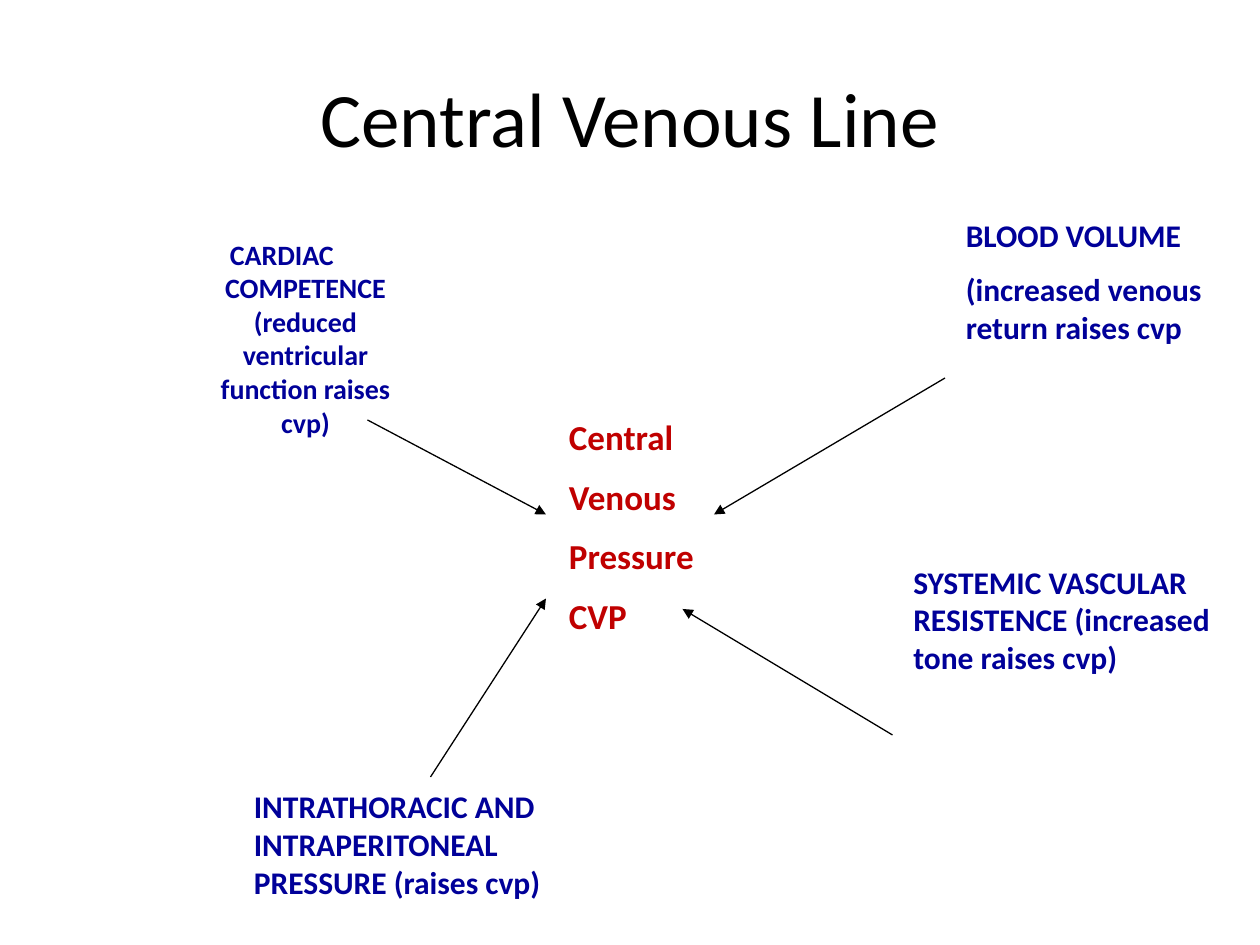
import pptx
import pptx.dml.color
import pptx.enum.shapes
import pptx.enum.text
import pptx.oxml.ns
import pptx.util
from lxml import etree
from dataclasses import dataclass

ALIGN = pptx.enum.text.PP_ALIGN
ANCHOR = pptx.enum.text.MSO_ANCHOR
FIT = pptx.enum.text.MSO_AUTO_SIZE


@dataclass(frozen=True)
class Theme:
    font: str = "Calibri"
    title: str = "000000"
    center: str = "C00000"
    factor: str = "000099"
    arrow: str = "000000"
    title_size: int = 44
    center_size: int = 20
    factor_size: int = 18
    small_size: int = 16
    arrow_width: float = 0.75


THEME = Theme()
COLUMNS, ROWS = 120, 90
CELL = pptx.util.Inches(10) // COLUMNS
HANGING = 4.5

TITLE = ("Central Venous Line", (6, 3.6, 108, 15))
CARDIAC = (
    "CARDIAC COMPETENCE (reduced ventricular function raises cvp)",
    (12.84, 22, 28, 21),
)
CENTER = (["Central", "Venous", "Pressure", "CVP"], (53, 39, 20, 23.2))
FACTORS = [
    (["BLOOD VOLUME", "(increased venous return raises cvp"], (90.8, 20, 26, 21.2)),
    (["SYSTEMIC VASCULAR RESISTENCE (increased tone raises cvp)"], (85.8, 53, 30.7, 19.4)),
    (["INTRATHORACIC AND INTRAPERITONEAL PRESSURE (raises cvp)"], (23, 74.4, 36, 15.6)),
]
ARROWS = [
    ((90, 36), (68, 49)),
    ((85, 70), (65, 58)),
    ((41, 74), (52, 57)),
    ((35, 40), (52, 49)),
]


def grid(*cells):
    return [pptx.util.Emu(round(cell * CELL)) for cell in cells]


def rgb(value):
    return pptx.dml.color.RGBColor.from_string(value)


def add_text(page, lines, area, size, color, bold=True, align=ALIGN.LEFT,
             anchor=ANCHOR.TOP, fit=FIT.SHAPE_TO_FIT_TEXT):
    box = page.shapes.add_textbox(*grid(*area))
    frame = box.text_frame
    frame.word_wrap = True
    frame.auto_size = fit
    frame.vertical_anchor = anchor
    for index, line in enumerate(lines):
        para = frame.add_paragraph() if index else frame.paragraphs[0]
        para.alignment = align
        if index:
            para.space_before = pptx.util.Pt(size / 2)
        span = para.add_run()
        span.text = line
        span.font.name = THEME.font
        span.font.size = pptx.util.Pt(size)
        span.font.bold = bold
        span.font.color.rgb = rgb(color)
    return box


def add_arrow(page, start, end):
    arrow = page.shapes.add_connector(
        pptx.enum.shapes.MSO_CONNECTOR.STRAIGHT, *grid(*start, *end))
    arrow.line.color.rgb = rgb(THEME.arrow)
    arrow.line.width = pptx.util.Pt(THEME.arrow_width)
    outline = arrow.line._get_or_add_ln()
    etree.SubElement(outline, pptx.oxml.ns.qn("a:tailEnd"), type="triangle")
    etree.SubElement(arrow._element.spPr, pptx.oxml.ns.qn("a:effectLst"))


def main():
    deck = pptx.Presentation()
    deck.slide_width, deck.slide_height = grid(COLUMNS, ROWS)
    page = deck.slides.add_slide(deck.slide_layouts[6])

    heading, area = TITLE
    add_text(page, [heading], area, THEME.title_size, THEME.title, bold=False,
             align=ALIGN.CENTER, anchor=ANCHOR.MIDDLE, fit=FIT.NONE)

    cardiac, area = CARDIAC
    box = add_text(page, [cardiac], area, THEME.small_size, THEME.factor,
                   align=ALIGN.CENTER, fit=FIT.NONE)
    indent = grid(HANGING)[0]
    properties = box.text_frame.paragraphs[0]._p.get_or_add_pPr()
    properties.set("marL", str(int(indent)))
    properties.set("indent", str(-int(indent)))

    add_text(page, *CENTER, THEME.center_size, THEME.center)
    for lines, area in FACTORS:
        add_text(page, lines, area, THEME.factor_size, THEME.factor)
    for start, end in ARROWS:
        add_arrow(page, start, end)

    deck.save("out.pptx")


if __name__ == "__main__":
    main()
